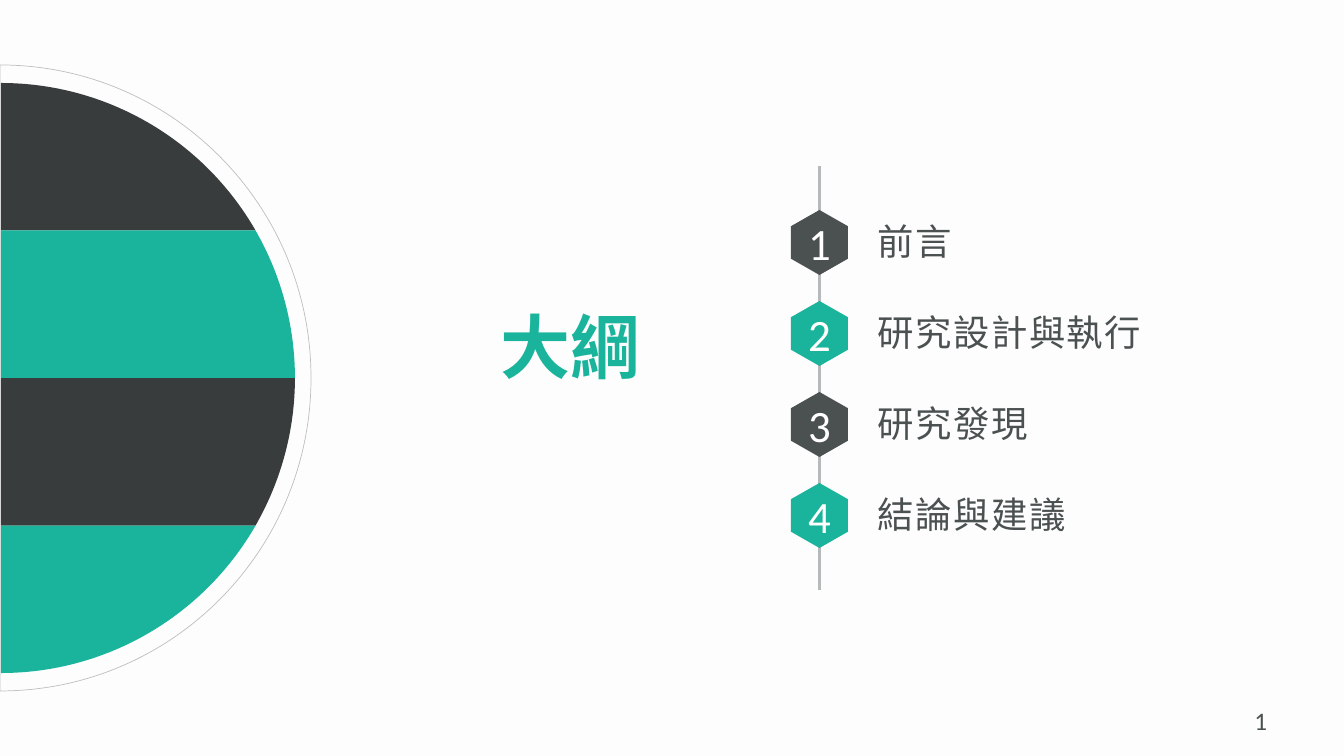
"""Build an outline slide: striped half disc, title and numbered agenda."""
import math

from lxml import etree
from pptx import Presentation
from pptx import util as u
from pptx.dml.color import RGBColor
from pptx.enum import shapes, text
from pptx.oxml.ns import qn

WIDE, HIGH = 1344, 756
SCALE = 12192000 / WIDE
FONT = "Calibri"
PAPER, DARK, TEAL, INK = "FDFDFD", "383C3C", "19B49B", "4B5050"
WHITE, RAIL, RIM = "FFFFFF", "B6BABA", "BFBFBF"
LEFT, MID, RIGHT = text.PP_ALIGN.LEFT, text.PP_ALIGN.CENTER, text.PP_ALIGN.RIGHT
ITEMS = ["前言", "研究設計與執行", "研究發現", "結論與建議"]


def px(num):
    """Turn px into EMU."""
    return u.Emu(round(num * SCALE))


def hue(code):
    """Turn a hex string into a colour."""
    return RGBColor.from_string(code)


def write(shape, words, size, tint, align, bold=False, space=0):
    """Set one line of formatted text in a shape."""
    frame = shape.text_frame
    frame.text = words
    frame.word_wrap = True
    frame.auto_size = text.MSO_AUTO_SIZE.NONE
    frame.vertical_anchor = text.MSO_ANCHOR.MIDDLE
    para = frame.paragraphs[0]
    para.alignment = align
    run = para.runs[0]
    font = run.font
    font.name, font.size, font.bold = FONT, u.Pt(size), bold
    font.color.rgb = hue(tint)
    if space:
        run._r.get_or_add_rPr().set("spc", str(space * 100))


def label(slide, box, *style, **more):
    """Add a text box and return it."""
    shape = slide.shapes.add_textbox(*map(px, box))
    write(shape, *style, **more)
    return shape


def bend(shape, step, curve):
    """Turn a straight step of an outline into a curve."""
    step.tag = qn("a:cubicBezTo")
    for spot in list(step):
        step.remove(spot)
    for x, y in curve:
        etree.SubElement(step, qn("a:pt"), x=str(px(x) - shape.left),
                         y=str(px(y) - shape.top))


def outline(slide, first, steps, fill=None, line=None):
    """Draw a closed outline; a step of three points is a curve."""
    ends = [[px(num) for num in step[-1]] for step in steps]
    build = slide.shapes.build_freeform(*map(px, first))
    build.add_line_segments(ends, close=True)
    shape = build.convert_to_shape()
    for node, step in zip(list(shape._element.iter(qn("a:lnTo"))), steps):
        if len(step) == 3:
            bend(shape, node, step)
    shape.shadow.inherit = False
    if fill:
        shape.fill.solid()
        shape.fill.fore_color.rgb = hue(fill)
    else:
        shape.fill.background()
    if line:
        shape.line.color.rgb = hue(line)
        shape.line.width = u.Pt(0.5)
    else:
        shape.line.fill.background()
    return shape


def arc(x, y, wide, tall, start, stop):
    """Give the two handles and the end of an elliptic arc."""
    a, b = math.radians(start), math.radians(stop)
    pull = 4 / 3 * math.tan((b - a) / 4)
    unit = [(math.cos(a) - pull * math.sin(a), math.sin(a) + pull * math.cos(a)),
            (math.cos(b) + pull * math.sin(b), math.sin(b) - pull * math.cos(b)),
            (math.cos(b), math.sin(b))]
    return [(x + wide * c, y + tall * s) for c, s in unit]


def disc(slide, box):
    """Draw four stripes of a half disc in a box."""
    x, y, wide, high = box
    tall = high / 2
    edges = [-90, -30, 0, 30, 90]
    for i, (start, stop) in enumerate(zip(edges, edges[1:])):
        curve = arc(x, y + tall, wide, tall, start, stop)
        top, end = y + i * high / 4, y + (i + 1) * high / 4
        steps = [curve]
        if start > -90:
            edge = x + wide * math.cos(math.radians(start))
            steps.insert(0, [(edge, top)])
        if stop < 90:
            steps.append([(x, end)])
        outline(slide, (x, top), steps, fill=(DARK, TEAL)[i % 2])


def rim(slide, box):
    """Draw the thin half ring in a box."""
    x, y, wide, high = box
    tall = high / 2
    steps = [arc(x, y + tall, wide, tall, turn, turn + 90) for turn in (-90, 0)]
    outline(slide, (x, y), steps, line=RIM)


def rail(slide, x, top, end):
    """Draw the upright line behind the badges."""
    line = slide.shapes.add_connector(
        shapes.MSO_CONNECTOR.STRAIGHT, px(x), px(top), px(x), px(end))
    line.line.color.rgb = hue(RAIL)
    line.line.width = u.Pt(2)
    etree.SubElement(line._element.spPr, qn("a:effectLst"))


def badge(slide, box, words, fill):
    """Draw an upright hexagon with its number."""
    x, y, w, h = box
    steps = [[(x + w, y + h / 4)], [(x + w, y + h * 3 / 4)], [(x + w / 2, y + h)],
             [(x, y + h * 3 / 4)], [(x, y + h / 4)]]
    shape = outline(slide, (x + w / 2, y), steps, fill)
    write(shape, words, 32, WHITE, MID)


def agenda(slide, box):
    """Place the rail, badges and topics in a box."""
    x, y, w, h = box
    wide, tall, step = 57, 65, 91
    rail(slide, x + wide / 2, y, y + h)
    for i, topic in enumerate(ITEMS):
        top = y + 44 + i * step
        name = label(slide, (x + 67, top + 2, w - 67, 58), topic, 26, INK, LEFT,
                     space=1)
        name.text_frame.margin_left = px(20)
        badge(slide, (x, top, wide, tall), str(i + 1), (INK, TEAL)[i % 2])


def head(slide, box):
    """Place the slide title in a box."""
    title = slide.shapes.title
    title.left, title.top, title.width, title.height = map(px, box)
    write(title, "大綱", 50, TEAL, MID, bold=True)


def main():
    """Build and save the slide."""
    deck = Presentation()
    deck.slide_width, deck.slide_height = px(WIDE), px(HIGH)
    slide = deck.slides.add_slide(deck.slide_layouts[5])
    slide.background.fill.solid()
    slide.background.fill.fore_color.rgb = hue(PAPER)
    disc(slide, (1, 83, 294, 590))
    rim(slide, (0, 65, 311, 626))
    agenda(slide, (791, 166, 553, 424))
    head(slide, (474, 302, 194, 87))
    label(slide, (964, 700, 313, 40), "1", 18, INK, RIGHT)
    deck.save("out.pptx")


if __name__ == "__main__":
    main()
